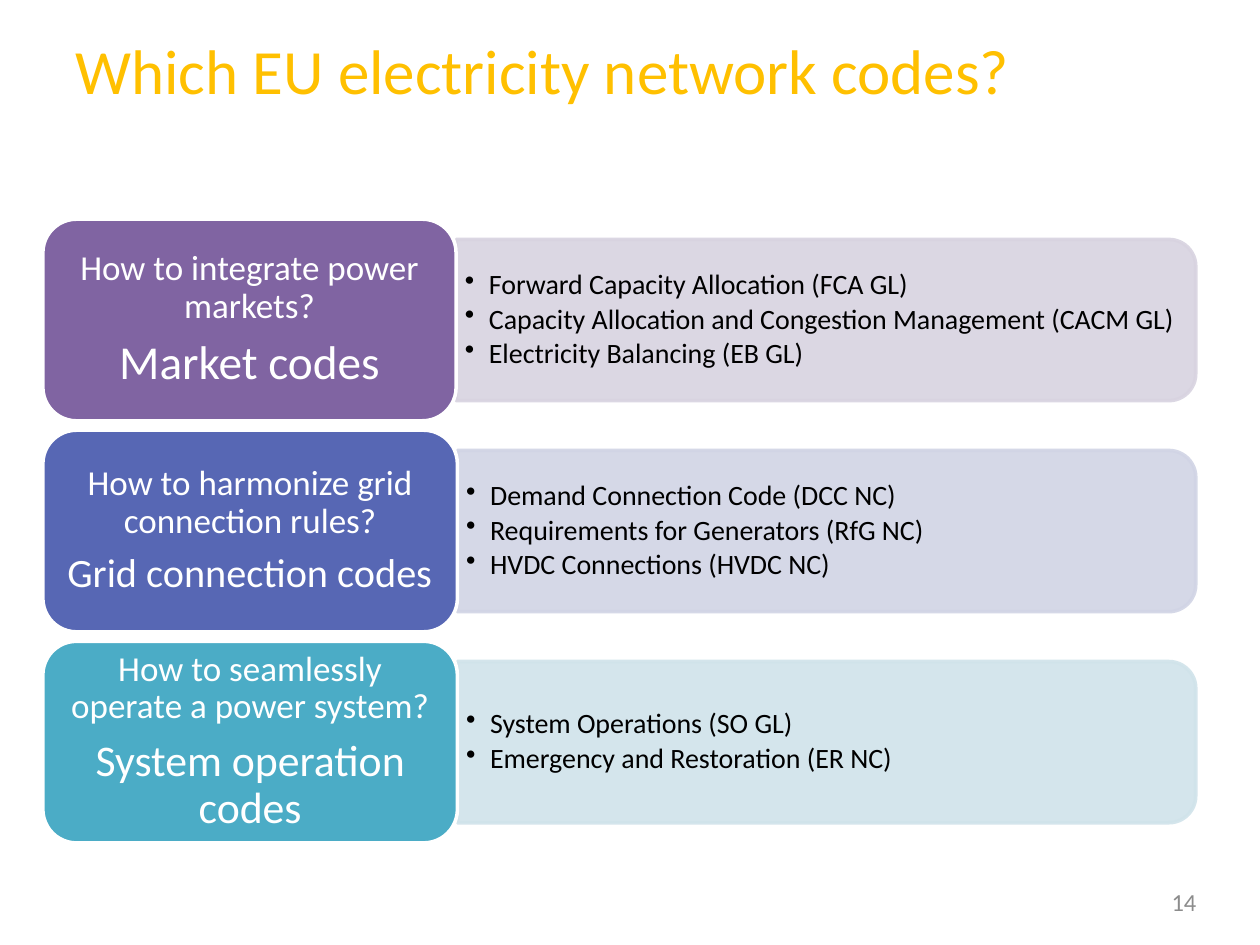
"""Build a slide that groups the EU electricity network codes into three families."""
import lxml.etree
import pptx
import pptx.dml.color
import pptx.enum.shapes
import pptx.enum.text
import pptx.oxml.ns
import pptx.util

COLOURS = {
    "title": "FFC000", "number": "8C8C8C", "white": "FFFFFF", "black": "000000",
    "market": "8064A2", "market panel": "D8D3E0",
    "grid": "5767B4", "grid panel": "D1D4E5",
    "system": "4BACC6", "system panel": "D0E3EA",
}
FAMILIES = [
    ("market", 3.28, "How to integrate power markets?", "Market codes", 27,
     ["Forward Capacity Allocation (FCA GL)",
      "Capacity Allocation and Congestion Management (CACM GL)",
      "Electricity Balancing (EB GL)"]),
    ("grid", 3.29, "How to harmonize grid connection rules?", "Grid connection codes", 23,
     ["Demand Connection Code (DCC NC)",
      "Requirements for Generators (RfG NC)",
      "HVDC Connections (HVDC NC)"]),
    ("system", 3.29, "How to seamlessly operate a power system?", "System operation codes", 25,
     ["System Operations (SO GL)", "Emergency and Restoration (ER NC)"]),
]
inches = pptx.util.Inches
LEFT, RIGHT, TOP = 0.34, 9.49, 1.74
CARD_HEIGHT, ROW_PITCH = 1.6, 1.675
PANEL_HEIGHT = CARD_HEIGHT * 0.8


def write(shape, lines, sizes, colour, margins=(0.1, 0.05), middle=True):
    frame = shape.text_frame
    frame.word_wrap = True
    frame.margin_left = frame.margin_right = inches(margins[0])
    frame.margin_top = frame.margin_bottom = inches(margins[1])
    anchor = pptx.enum.text.MSO_ANCHOR
    frame.vertical_anchor = anchor.MIDDLE if middle else anchor.TOP
    frame.text = "\n".join(lines)
    for paragraph, size in zip(frame.paragraphs, sizes):
        font = paragraph.runs[0].font
        font.name = "Calibri"
        font.size = pptx.util.Pt(size)
        font.color.rgb = pptx.dml.color.RGBColor.from_string(COLOURS[colour])
    return frame.paragraphs


def paint(shape, fill, line, alpha=None):
    shape.shadow.inherit = False
    shape.fill.solid()
    shape.fill.fore_color.rgb = pptx.dml.color.RGBColor.from_string(COLOURS[fill])
    shape.line.color.rgb = pptx.dml.color.RGBColor.from_string(COLOURS[line])
    shape.line.width = pptx.util.Pt(2)
    if alpha:
        for colour in shape._element.spPr.iter(pptx.oxml.ns.qn("a:srgbClr")):
            lxml.etree.SubElement(colour, pptx.oxml.ns.qn("a:alpha"), val=str(alpha * 1000))


presentation = pptx.Presentation()
presentation.slide_width, presentation.slide_height = inches(10), inches(7.5)
slide = presentation.slides.add_slide(presentation.slide_layouts[6])
shapes = slide.shapes
presets = pptx.enum.shapes.MSO_SHAPE

number = shapes.add_textbox(inches(9.2), inches(6.96), inches(0.63), inches(0.4))
write(number, ["14"], [14], "number")
title = shapes.add_textbox(inches(0.5), inches(0.29), inches(8.99), inches(1.18))
heading = write(title, ["Which EU electricity network codes?"], [36], "title", middle=False)
heading[0].line_spacing = pptx.util.Pt(37)

for row, (family, card_width, question, name, name_size, codes) in enumerate(FAMILIES):
    top = TOP + row * ROW_PITCH
    middle = top + CARD_HEIGHT / 2
    panel_left = LEFT + card_width
    panel_width = RIGHT - panel_left

    panel = shapes.add_shape(
        presets.ROUND_2_SAME_RECTANGLE,
        inches(panel_left + (panel_width - PANEL_HEIGHT) / 2), inches(middle - panel_width / 2),
        inches(PANEL_HEIGHT), inches(panel_width))
    panel.rotation = 90
    paint(panel, f"{family} panel", f"{family} panel", alpha=90)

    code_list = shapes.add_textbox(
        inches(panel_left), inches(middle - 0.575), inches(panel_width - 0.06), inches(1.15))
    for paragraph in write(code_list, codes, [16] * len(codes), "black", (0.07, 0.03)):
        paragraph.line_spacing = 0.9
        paragraph.space_after = pptx.util.Pt(2.4)
        properties = paragraph._p.get_or_add_pPr()
        properties.set("marL", str(inches(0.19)))
        properties.set("indent", str(-inches(0.19)))
        lxml.etree.SubElement(properties, pptx.oxml.ns.qn("a:buChar"), char="•")

    card = shapes.add_shape(
        presets.ROUNDED_RECTANGLE,
        inches(LEFT), inches(top), inches(card_width), inches(CARD_HEIGHT))
    paint(card, family, "white")
    for paragraph in write(card, [question, name], [20, name_size], "white", (0.08, 0.04)):
        paragraph.alignment = pptx.enum.text.PP_ALIGN.CENTER
        paragraph.line_spacing = 0.9
        paragraph.space_after = pptx.util.Pt(7)

presentation.save("out.pptx")
